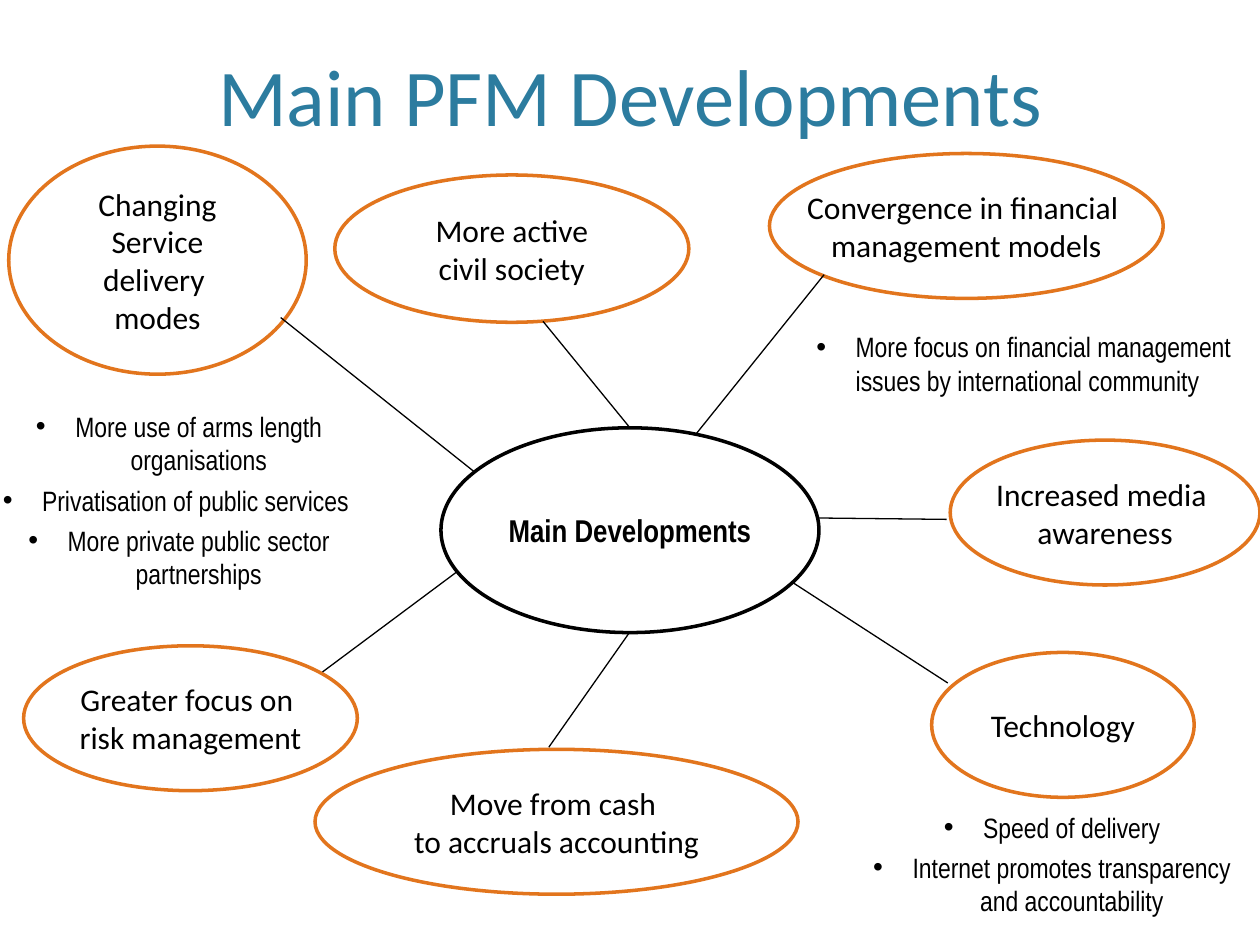
from dataclasses import dataclass

from lxml.etree import SubElement
from pptx import Presentation
from pptx.dml.color import RGBColor
from pptx.enum.shapes import MSO_CONNECTOR, MSO_SHAPE
from pptx.enum.text import MSO_ANCHOR, MSO_AUTO_SIZE, PP_ALIGN
from pptx.oxml.ns import qn
from pptx.util import Pt


@dataclass(frozen=True)
class Theme:
    title_color: RGBColor = RGBColor(0x2C, 0x7C, 0x9F)
    accent: RGBColor = RGBColor(0xE2, 0x75, 0x1D)
    ink: RGBColor = RGBColor(0, 0, 0)
    paper: RGBColor = RGBColor(255, 255, 255)
    title_size: int = 46
    topic_size: int = 18
    note_size: int = 16
    body_font: str = "Calibri"
    narrow_font: str = "Arial Narrow"


theme = Theme()


def write_text(frame, text, size=theme.topic_size, font=theme.body_font, color=theme.ink,
               bold=False, align=PP_ALIGN.CENTER, anchor=MSO_ANCHOR.MIDDLE,
               wrap=False, bullet=False):
    frame.word_wrap = wrap
    frame.vertical_anchor = anchor
    for index, line in enumerate(text.split("\n")):
        para = frame.add_paragraph() if index else frame.paragraphs[0]
        para.text = line
        para.alignment = align
        for span in para.runs:
            span.font.size = Pt(size)
            span.font.name = font
            span.font.bold = bold
            span.font.color.rgb = color
        if bullet:
            para.space_before = Pt(3.7)
            properties = para._p.get_or_add_pPr()
            properties.set("marL", str(Pt(22.5)))
            properties.set("indent", str(-Pt(22.5)))
            SubElement(properties, qn("a:buFont")).set("typeface", "Arial")
            SubElement(properties, qn("a:buChar")).set("char", "•")


deck = Presentation()
deck.slide_width = Pt(720)
deck.slide_height = Pt(540)
page = deck.slides.add_slide(deck.slide_layouts[6])

title = page.shapes.add_textbox(Pt(36), Pt(13.5), Pt(648), Pt(71.5))
write_text(title.text_frame, "Main PFM Developments", size=theme.title_size,
           color=theme.title_color, anchor=MSO_ANCHOR.BOTTOM, wrap=True)

hub_format = {"font": theme.narrow_font, "bold": True}
ellipses = [
    ("Main Developments", 252, 244.5, 216, 117, theme.ink, hub_format),
    ("Convergence in financial \nmanagement models", 439.7, 87.7, 225, 82.8, theme.accent, {}),
    ("Increased media \nawareness", 543, 251.5, 177, 82.8, theme.accent, {}),
    ("Technology", 532.4, 372.8, 150, 82.8, theme.accent, {}),
    ("Move from cash \vto accruals accounting", 180, 428.2, 276, 82.8, theme.accent, {}),
    ("Greater focus on \nrisk management", 13.5, 369, 190.7, 82.8, theme.accent, {}),
    ("Changing\v Service \vdelivery \nmodes", 5, 83.5, 170, 130.3, theme.accent, {}),
    ("More active\ncivil society", 191.3, 100, 202.3, 84.2, theme.accent, {}),
]
for text, left, top, width, height, outline, text_format in ellipses:
    ellipse = page.shapes.add_shape(MSO_SHAPE.OVAL, Pt(left), Pt(top), Pt(width), Pt(height))
    ellipse.shadow.inherit = False
    ellipse.fill.solid()
    ellipse.fill.fore_color.rgb = theme.paper
    ellipse.line.color.rgb = outline
    ellipse.line.width = Pt(2)
    write_text(ellipse.text_frame, text, **text_format)

spokes = [
    (360, 244.5, 310.3, 183.6),
    (398, 247.7, 470.9, 157),
    (467.5, 296, 541, 296.8),
    (453, 332.9, 541.6, 390.3),
    (360, 361, 313.6, 427),
    (260.8, 327, 184.3, 384),
    (271.3, 269.8, 160.4, 181.5),
]
for start_x, start_y, end_x, end_y in spokes:
    spoke = page.shapes.add_connector(
        MSO_CONNECTOR.STRAIGHT, Pt(start_x), Pt(start_y), Pt(end_x), Pt(end_y))
    spoke.line.color.rgb = theme.ink
    spoke.line.width = Pt(0.75)
    SubElement(spoke._element.spPr, qn("a:effectLst"))

notes = [
    ("More focus on financial management issues by international community",
     459.4, 185, 269.3, 46, PP_ALIGN.LEFT),
    ("Speed of delivery\nInternet promotes transparency and accountability",
     482.4, 459.4, 237.6, 69, PP_ALIGN.CENTER),
    ("More use of arms length organisations\nPrivatisation of public services \n"
     "More private public sector partnerships",
     -23, 230.4, 250.6, 111.6, PP_ALIGN.CENTER),
]
for text, left, top, width, height, align in notes:
    box = page.shapes.add_textbox(Pt(left), Pt(top), Pt(width), Pt(height))
    write_text(box.text_frame, text, size=theme.note_size, font=theme.narrow_font,
               align=align, anchor=MSO_ANCHOR.TOP, wrap=True, bullet=True)
    box.text_frame.auto_size = MSO_AUTO_SIZE.SHAPE_TO_FIT_TEXT

deck.save("out.pptx")
